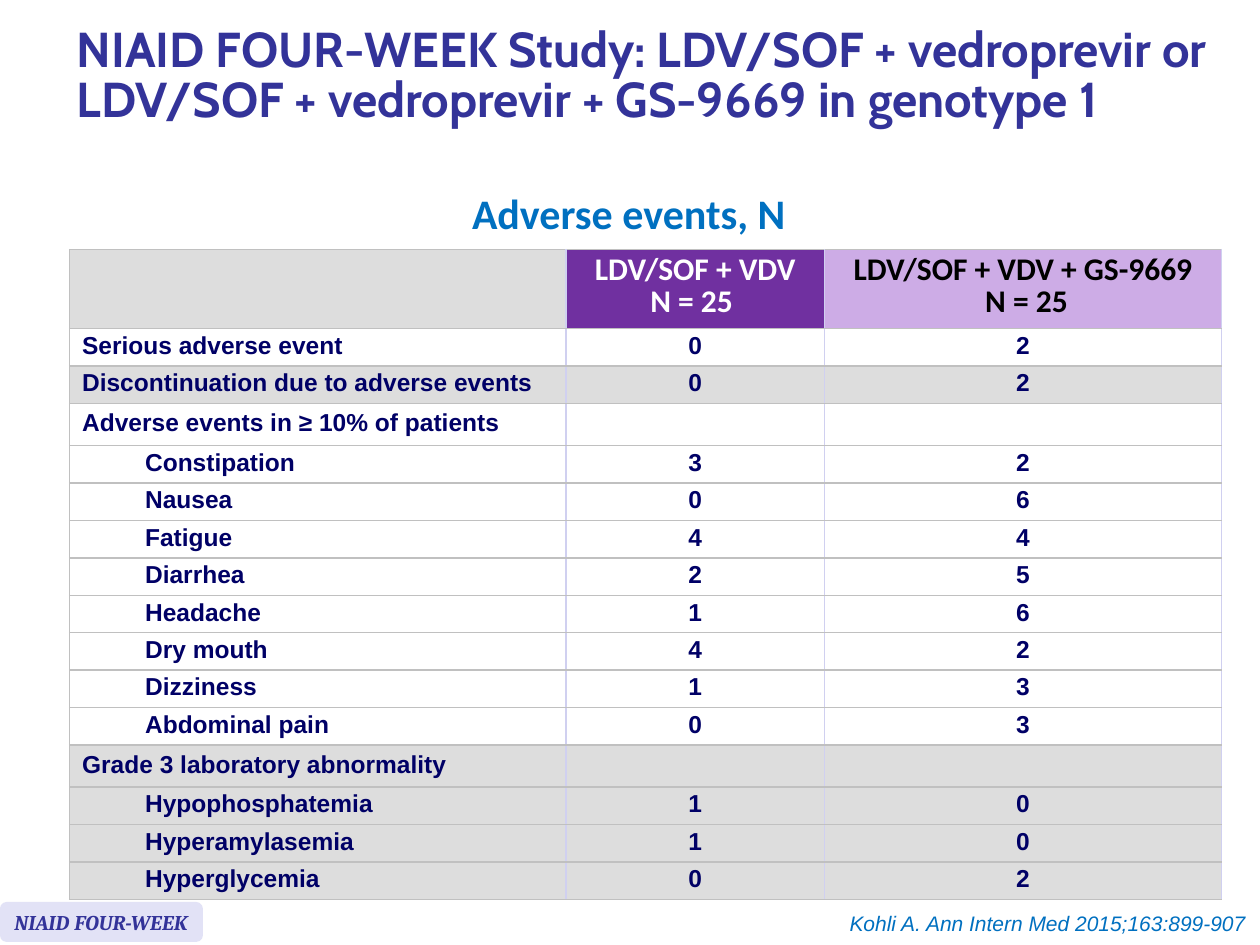
from lxml import etree
from pptx import Presentation
from pptx.dml.color import RGBColor
from pptx.enum.shapes import MSO_SHAPE
from pptx.enum.text import MSO_ANCHOR, PP_ALIGN
from pptx.oxml.ns import qn
from pptx.util import Emu, Pt

ROUNDED = MSO_SHAPE.ROUNDED_RECTANGLE
TOP, MIDDLE = MSO_ANCHOR.TOP, MSO_ANCHOR.MIDDLE
LEFT, CENTER, RIGHT = PP_ALIGN.LEFT, PP_ALIGN.CENTER, PP_ALIGN.RIGHT

PX_PER_INCH = 252

INDIGO = RGBColor(0x33, 0x33, 0x99)
BLUE = RGBColor(0x00, 0x70, 0xC0)
NAVY = RGBColor(0x00, 0x00, 0x66)
PURPLE = RGBColor(0x70, 0x30, 0xA0)
LILAC = RGBColor(0xCD, 0xAC, 0xE6)
PALE = RGBColor(0xE2, 0xE2, 0xF6)
GREY = RGBColor(0xDD, 0xDD, 0xDD)
WHITE = RGBColor(0xFF, 0xFF, 0xFF)
BLACK = RGBColor(0x00, 0x00, 0x00)
RULE_GREY = RGBColor(0xC0, 0xC0, 0xC0)
RULE_LILAC = RGBColor(0xD0, 0xD0, 0xF0)

COLUMN_WIDTHS = (993, 517, 794)
HEADER_HEIGHT, ROW_HEIGHT, SECTION_HEIGHT = 158, 75, 81
INDENT = 126

ARMS = (
    ((), GREY, BLACK),
    (("LDV/SOF + VDV", "N = 25 "), PURPLE, WHITE),
    (("LDV/SOF + VDV + GS-9669", " N = 25"), LILAC, BLACK),
)
# label, counts per arm (none for a section heading), indent level, fill
EVENTS = (
    ("Serious adverse event", (0, 2), 0, WHITE),
    ("Discontinuation due to adverse events", (0, 2), 0, GREY),
    ("Adverse events in ≥ 10% of patients", (), 0, WHITE),
    ("Constipation", (3, 2), 1, WHITE),
    ("Nausea", (0, 6), 1, WHITE),
    ("Fatigue", (4, 4), 1, WHITE),
    ("Diarrhea", (2, 5), 1, WHITE),
    ("Headache", (1, 6), 1, WHITE),
    ("Dry mouth", (4, 2), 1, WHITE),
    ("Dizziness", (1, 3), 1, WHITE),
    ("Abdominal pain", (0, 3), 1, WHITE),
    ("Grade 3 laboratory abnormality", (), 0, GREY),
    ("Hypophosphatemia", (1, 0), 1, GREY),
    ("Hyperamylasemia", (1, 0), 1, GREY),
    ("Hyperglycemia", (0, 2), 1, GREY),
)


def px(length):
    return Emu(round(length * 914400 / PX_PER_INCH))


def add_span(para, text, font, size, color, bold=True, italic=False):
    span = para.add_run()
    span.text = text
    span.font.name = font
    span.font.size = Pt(size)
    span.font.color.rgb = color
    span.font.bold = bold
    span.font.italic = italic


def add_text(page, box, text, font, size, color, align=LEFT, anchor=TOP,
             wrap=False, spacing=None, bold=True, italic=False):
    frame = page.shapes.add_textbox(*map(px, box)).text_frame
    frame.word_wrap = wrap
    frame.vertical_anchor = anchor
    para = frame.paragraphs[0]
    para.alignment = align
    para.line_spacing = spacing
    add_span(para, text, font, size, color, bold, italic)


def add_badge(page, box, text):
    badge = page.shapes.add_shape(ROUNDED, *map(px, box))
    badge.shadow.inherit = False
    badge.fill.solid()
    badge.fill.fore_color.rgb = PALE
    badge.line.fill.background()
    frame = badge.text_frame
    frame.word_wrap = False
    frame.vertical_anchor = MIDDLE
    para = frame.paragraphs[0]
    para.alignment = LEFT
    add_span(para, text, "Cambria", 12, INDIGO, italic=True)


def style_cell(cell, fill, left_rule):
    """Draw the four cell borders, then the fill."""
    properties = cell._tc.get_or_add_tcPr()
    rules = (("a:lnL", left_rule), ("a:lnR", RULE_LILAC),
             ("a:lnT", RULE_GREY), ("a:lnB", RULE_GREY))
    for tag, color in rules:
        line = etree.SubElement(properties, qn(tag), w=str(Pt(1)))
        solid = etree.SubElement(line, qn("a:solidFill"))
        etree.SubElement(solid, qn("a:srgbClr"), val=str(color))
    cell.fill.solid()
    cell.fill.fore_color.rgb = fill
    cell.vertical_anchor = MIDDLE


def write_cell(cell, lines, font, size, color, align=CENTER, level=0):
    """Write one paragraph per line; an empty cell keeps the text size."""
    frame = cell.text_frame
    for index, text in enumerate(lines or ("",)):
        para = frame.add_paragraph() if index else frame.paragraphs[0]
        para.alignment = align
        para.line_spacing = Pt(size)
        if level:
            para.level = level
            para._p.get_or_add_pPr().set("marL", str(px(INDENT * level)))
        if text:
            add_span(para, text, font, size, color)
        else:
            end = etree.SubElement(para._p, qn("a:endParaRPr"),
                                   sz=str(size * 100))
            etree.SubElement(end, qn("a:latin"), typeface=font)


def add_events_table(page, left, top):
    heights = [HEADER_HEIGHT] + [
        ROW_HEIGHT if counts else SECTION_HEIGHT for _, counts, _, _ in EVENTS]
    box = (left, top, sum(COLUMN_WIDTHS), sum(heights))
    table = page.shapes.add_table(
        len(heights), len(COLUMN_WIDTHS), *map(px, box)).table
    for column, width in zip(table.columns, COLUMN_WIDTHS):
        column.width = px(width)
    for row, height in zip(table.rows, heights):
        row.height = px(height)

    for index, (lines, fill, color) in enumerate(ARMS):
        cell = table.cell(0, index)
        style_cell(cell, fill, RULE_LILAC if index else RULE_GREY)
        write_cell(cell, lines, "Calibri", 18, color)

    for row, (label, counts, level, fill) in enumerate(EVENTS, 1):
        for index in range(len(COLUMN_WIDTHS)):
            style_cell(table.cell(row, index), fill,
                       RULE_LILAC if index else RULE_GREY)
        write_cell(table.cell(row, 0), (label,), "Arial", 14, NAVY, LEFT, level)
        for index, count in enumerate(counts or ("", ""), 1):
            write_cell(table.cell(row, index), (str(count),), "Arial", 14, NAVY)


def build_page(page):
    add_text(page, (129, 20, 2389, 270),
             "NIAID FOUR-WEEK Study: LDV/SOF + vedroprevir or "
             "LDV/SOF + vedroprevir + GS-9669 in genotype 1",
             "Cabin", 28, INDIGO, anchor=MIDDLE, wrap=True, spacing=0.85)
    add_events_table(page, 139, 499)
    add_text(page, (915, 381, 685, 111), "Adverse events, N",
             "Calibri", 24, BLUE, align=CENTER, spacing=Pt(23.6))
    add_badge(page, (0, 1804, 406, 80), "NIAID FOUR-WEEK")
    add_text(page, (1668, 1809, 849, 76),
             "Kohli A. Ann Intern Med 2015;163:899-907",
             "Arial", 12, BLUE, align=RIGHT, bold=False, italic=True)


def main():
    deck = Presentation()
    deck.slide_width, deck.slide_height = px(2520), px(1890)
    build_page(deck.slides.add_slide(deck.slide_layouts[6]))
    deck.save("out.pptx")


if __name__ == "__main__":
    main()
